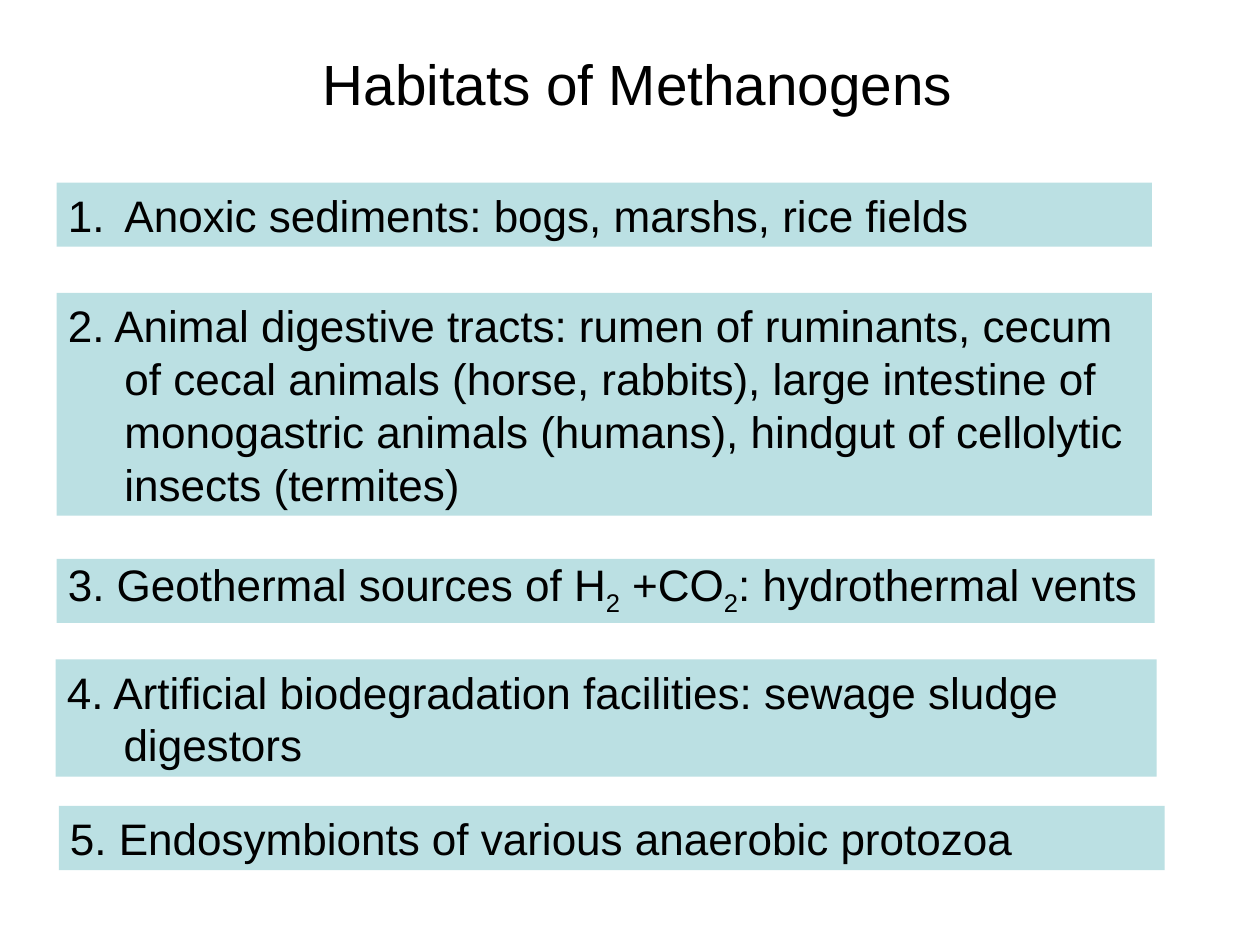
"""Build the slide on the habitats of methanogens."""
from lxml import etree
from pptx import Presentation
from pptx.dml.color import RGBColor
from pptx.enum.shapes import MSO_SHAPE
from pptx.enum.text import MSO_ANCHOR, MSO_AUTO_SIZE, PP_ALIGN
from pptx.oxml.ns import qn
from pptx.util import Pt

RECTANGLE = MSO_SHAPE.RECTANGLE
TOP = MSO_ANCHOR.TOP
LEFT = PP_ALIGN.LEFT
GROW = MSO_AUTO_SIZE.SHAPE_TO_FIT_TEXT
BLACK = RGBColor(0x00, 0x00, 0x00)
PALE_TEAL = RGBColor(0xBB, 0xE0, 0xE3)
LINE_RATIO = 1.2
BODY_SIZE = 28
BODY_LINE = BODY_SIZE * LINE_RATIO
PADDING = 7.2
INDENT = 36


def set_frame(s, wrap):
    tf = s.text_frame
    tf.word_wrap = wrap
    tf.auto_size = GROW
    tf.vertical_anchor = TOP
    p = tf.paragraphs[0]
    p.alignment = LEFT
    return p


def add_run(p, text, size):
    p.line_spacing = Pt(size * LINE_RATIO)
    r = p.add_run()
    r.text = text
    r.font.name = "Arial"
    r.font.size = Pt(size)
    r.font.color.rgb = BLACK
    return r


prs = Presentation()
prs.slide_width, prs.slide_height = Pt(800.64), Pt(599.76)
slide = prs.slides.add_slide(prs.slide_layouts[6])

title = slide.shapes.add_textbox(Pt(198), Pt(27.4), Pt(414.7), Pt(50.4))
add_run(set_frame(title, False), "Habitats of Methanogens", 36)

habitats = [
    (36, 116, 696, 1, True, ["Anoxic sediments: bogs, marshs, rice fields"]),
    (36, 186, 696, 4, True, [
        "2. Animal digestive tracts: rumen of ruminants, cecum of cecal animals "
        "(horse, rabbits), large intestine of monogastric animals (humans), "
        "hindgut of cellolytic insects (termites)"]),
    (36, 355, 697.7, 1, False, [
        "3. Geothermal sources of H", "2", " +CO", "2", ": hydrothermal vents"]),
    (35.4, 419, 699.5, 2, True, [
        "4. Artificial biodegradation facilities: sewage sludge digestors"]),
    (37.4, 512, 702.7, 1, True, ["5. Endosymbionts of various anaerobic protozoa"]),
]

for number, (left, top, width, lines, wrap, texts) in enumerate(habitats, 1):
    height = lines * BODY_LINE + PADDING
    s = slide.shapes.add_shape(RECTANGLE, Pt(left), Pt(top), Pt(width), Pt(height))
    s.shadow.inherit = False
    s.fill.solid()
    s.fill.fore_color.rgb = PALE_TEAL
    s.line.fill.background()
    p = set_frame(s, wrap)
    for text in texts:
        r = add_run(p, text, BODY_SIZE)
        if text == "2":
            r.font._element.set("baseline", "-25000")
    pPr = p._p.get_or_add_pPr()
    pPr.set("marL", str(Pt(INDENT)))
    pPr.set("indent", str(Pt(-INDENT)))
    if number == 1:
        etree.SubElement(pPr, qn("a:buFont"), typeface="+mj-lt")
        etree.SubElement(pPr, qn("a:buAutoNum"), type="arabicPeriod")

prs.save("out.pptx")
